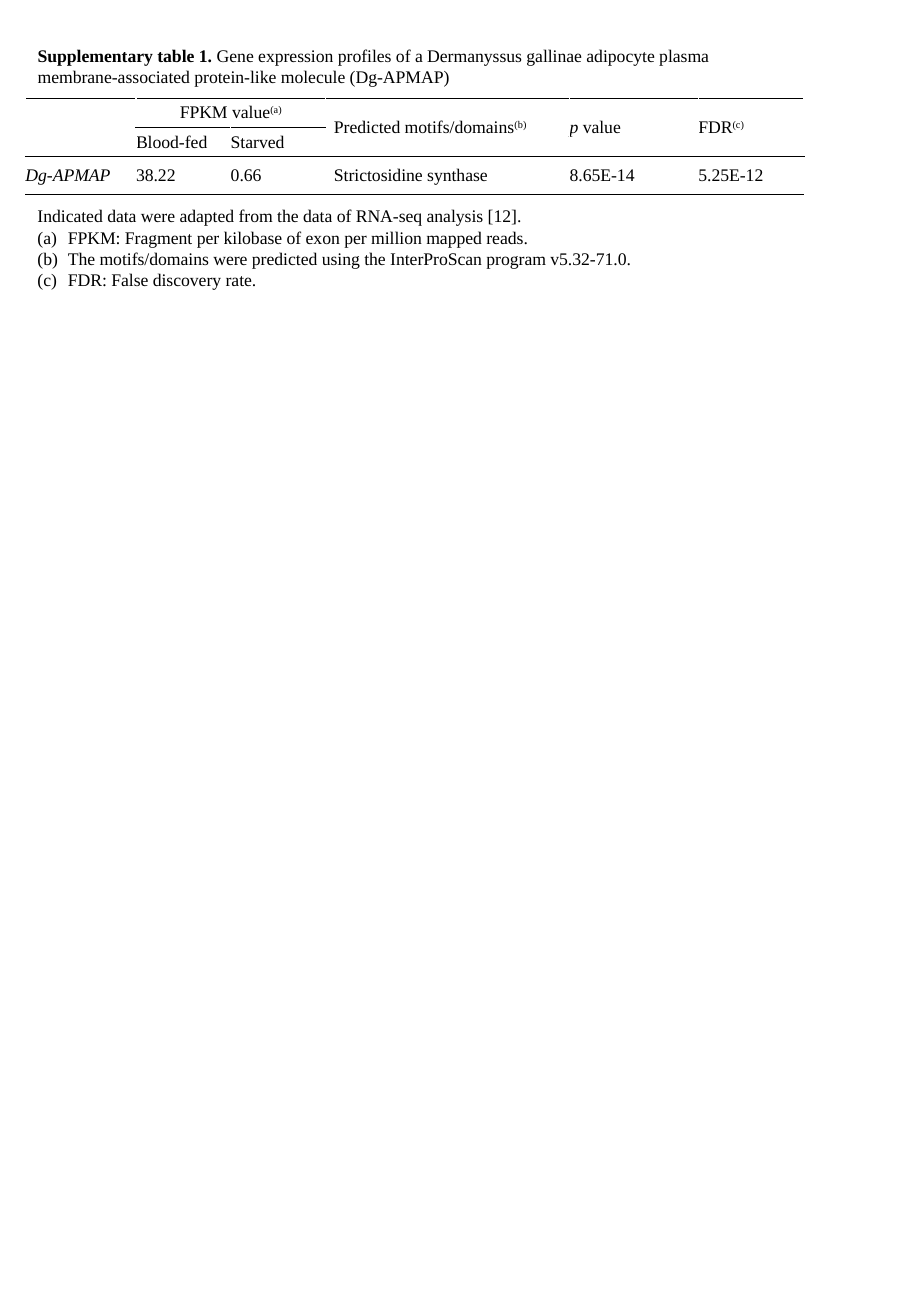
from lxml import etree
from pptx import Presentation
from pptx.dml.color import RGBColor
from pptx.enum.text import MSO_ANCHOR, MSO_AUTO_SIZE, PP_ALIGN
from pptx.oxml.ns import qn
from pptx.util import Inches, Pt

LEFT, CENTER = PP_ALIGN.LEFT, PP_ALIGN.CENTER
TOP, MIDDLE = MSO_ANCHOR.TOP, MSO_ANCHOR.MIDDLE
FIT_SHAPE = MSO_AUTO_SIZE.SHAPE_TO_FIT_TEXT
BLACK, WHITE = "000000", "FFFFFF"
TITLE_ONLY = 5
PLAIN_TABLE_STYLE = "{2D5ABB26-0587-4C30-8999-92F81FD0307C}"
BODY_FONT = {"name": "Times New Roman", "size": Pt(10.5), "bold": False, "italic": False}


def add_runs(paragraph, pieces):
    for text, changes in pieces:
        run = paragraph.add_run()
        run.text = text
        for name, value in {**BODY_FONT, **changes}.items():
            if name == "baseline":
                run.font._element.set(name, value)
            else:
                setattr(run.font, name, value)
        run.font.color.rgb = RGBColor.from_string(BLACK)


def add_border(cell, side, color, width):
    properties = cell._tc.get_or_add_tcPr()
    line = etree.SubElement(properties, qn(f"a:ln{side}"), w=str(Pt(width)))
    fill = etree.SubElement(line, qn("a:solidFill"))
    etree.SubElement(fill, qn("a:srgbClr"), val=color)


presentation = Presentation()
presentation.slide_width = Inches(7.5)
presentation.slide_height = Inches(10.83)
slide = presentation.slides.add_slide(presentation.slide_layouts[TITLE_ONLY])

caption = slide.shapes.title
caption.left, caption.top = Inches(0.21), Inches(0.32)
caption.width, caption.height = Inches(6.17), Inches(0.45)
notes = slide.shapes.add_textbox(Inches(0.21), Inches(1.64), Inches(5.52), Inches(0.81))
frame_format = {"word_wrap": True, "auto_size": FIT_SHAPE, "vertical_anchor": TOP}
for shape in (caption, notes):
    for name, value in frame_format.items():
        setattr(shape.text_frame, name, value)

caption_paragraph = caption.text_frame.paragraphs[0]
caption_paragraph.alignment = LEFT
add_runs(caption_paragraph, [
    ("Supplementary table 1. ", {"bold": True}),
    ("Gene expression profiles of a Dermanyssus gallinae adipocyte plasma "
     "membrane-associated protein-like molecule (Dg-APMAP)", {}),
])

column_widths = [0.91, 0.78, 0.78, 2.01, 1.06, 0.87]
row_heights = [0.24, 0.24, 0.31]
italic, superscript = {"italic": True}, {"baseline": "30000"}
cell_pieces = [
    [[], [("FPKM value", {}), ("(a)", superscript)], [],
     [("Predicted motifs/domains", {}), ("(b)", superscript)],
     [("p ", italic), ("value", {})],
     [("FDR", {}), ("(c)", superscript)]],
    [[], [("Blood-fed", {})], [("Starved", {})], [], [], []],
    [[("Dg-APMAP", italic)], [("38.22", {})], [("0.66", {})],
     [("Strictosidine synthase", {})], [("8.65E-14", {})], [("5.25E-12", {})]],
]
frame = slide.shapes.add_table(
    len(row_heights), len(column_widths), Inches(0.21), Inches(0.81),
    Inches(sum(column_widths)), Inches(sum(row_heights)))
table = frame.table
table.first_row = table.horz_banding = False
table._tbl.tblPr.find(qn("a:tableStyleId")).text = PLAIN_TABLE_STYLE
for column, width in zip(table.columns, column_widths):
    column.width = Inches(width)
for row, height in zip(table.rows, row_heights):
    row.height = Inches(height)

table.cell(0, 1).merge(table.cell(0, 2))
for column_index in (3, 4, 5):
    table.cell(0, column_index).merge(table.cell(1, column_index))

thin, thick, blank = (BLACK, 0.5), (BLACK, 0.75), (WHITE, 1)
cell_format = {"margin_left": 0, "margin_right": 0, "margin_top": 0,
               "margin_bottom": 0, "vertical_anchor": MIDDLE}
for row_index, row_pieces in enumerate(cell_pieces):
    for column_index, pieces in enumerate(row_pieces):
        cell = table.cell(row_index, column_index)
        for name, value in cell_format.items():
            setattr(cell, name, value)
        if column_index == 3:
            cell.margin_left = Inches(0.07)
        paragraph = cell.text_frame.paragraphs[0]
        paragraph.alignment = CENTER if (row_index, column_index) == (0, 1) else LEFT
        add_runs(paragraph, pieces)
        if not pieces:
            etree.SubElement(paragraph._p, qn("a:endParaRPr"), sz="1050")
        header_split = thin if column_index else blank
        horizontal_lines = [thick, header_split, thin, thick]
        if row_index < 2:
            add_border(cell, "L", *blank)
            add_border(cell, "R", *blank)
        add_border(cell, "T", *horizontal_lines[row_index])
        add_border(cell, "B", *horizontal_lines[row_index + 1])
        cell.fill.background()

add_runs(notes.text_frame.paragraphs[0], [
    ("Indicated data were adapted from the data of RNA-seq analysis [12].", {})])
for note in (
    "FPKM: Fragment per kilobase of exon per million mapped reads.",
    "The motifs/domains were predicted using the InterProScan program v5.32-71.0.",
    "FDR: False discovery rate.",
):
    paragraph = notes.text_frame.add_paragraph()
    add_runs(paragraph, [(note, {})])
    properties = paragraph._p.get_or_add_pPr()
    properties.set("marL", str(Inches(0.25)))
    properties.set("indent", str(Inches(-0.25)))
    etree.SubElement(properties, qn("a:buFont"), typeface=BODY_FONT["name"])
    etree.SubElement(properties, qn("a:buAutoNum"), type="alphaLcParenBoth")

presentation.save("out.pptx")
